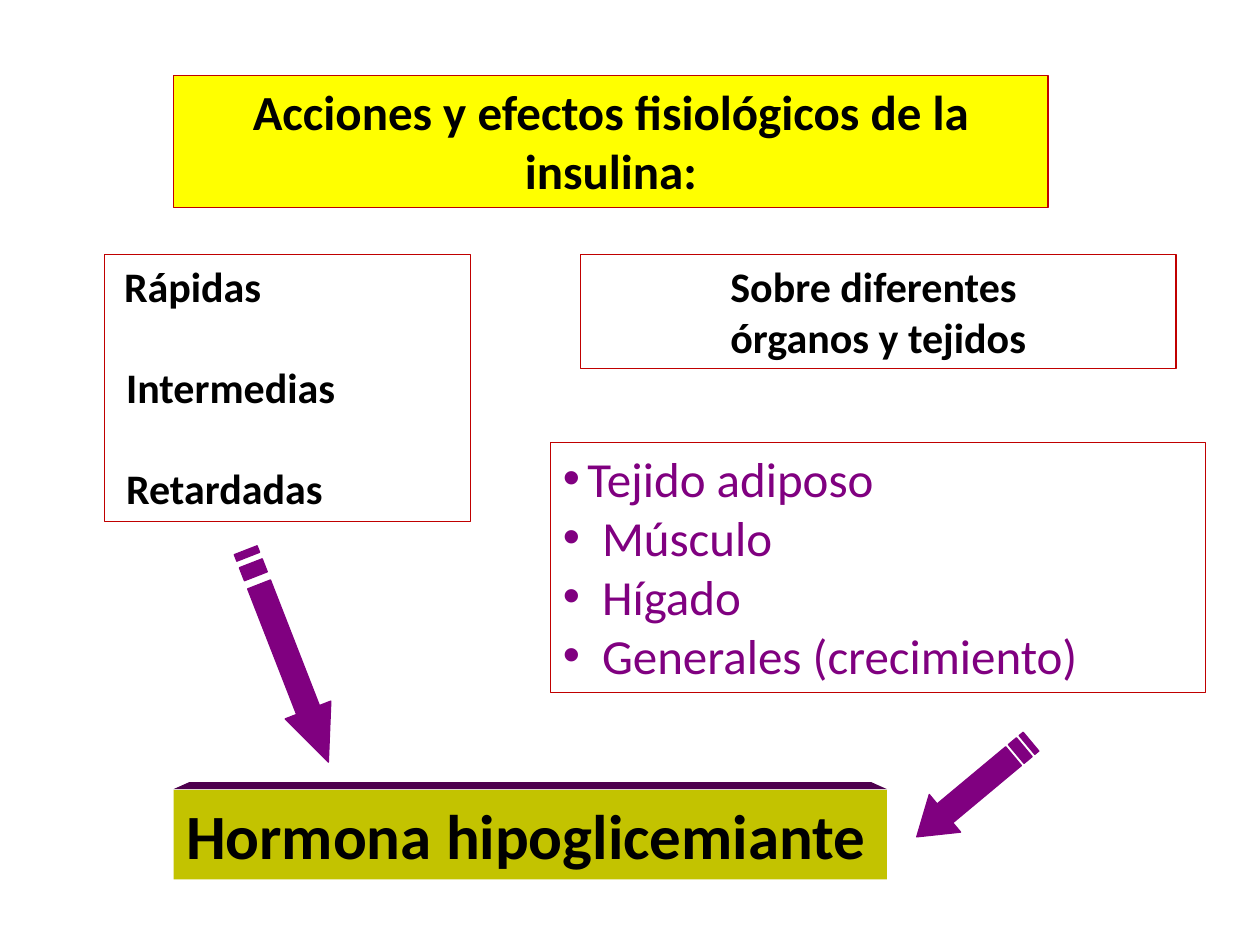
from lxml import etree
from pptx import Presentation
from pptx import util as u
from pptx.dml.color import RGBColor
from pptx.enum import shapes, text
from pptx.oxml.ns import qn

COLORS = {"yellow": "FFFF00", "olive": "C3C300", "white": "FFFFFF", "red": "C00000",
          "purple": "800080", "dark_purple": "4D004D", "black": "000000"}
LEFT, CENTER = text.PP_ALIGN.LEFT, text.PP_ALIGN.CENTER


def rgb(name):
    return RGBColor.from_string(COLORS[name])


class SlideBuilder:
    font = "Calibri"
    line_width = 0.75

    def __init__(self, slide):
        self.slide = slide

    def paint(self, shape, fill, line):
        if fill:
            shape.fill.solid()
            shape.fill.fore_color.rgb = rgb(fill)
        else:
            shape.fill.background()
        if line:
            shape.line.color.rgb = rgb(line)
            shape.line.width = u.Pt(self.line_width)
        else:
            shape.line.fill.background()

    def set_lines(self, shape, lines, size, color="black", bold=True, align=LEFT, wrap=True):
        frame = shape.text_frame
        frame.text = "\n".join(lines)
        frame.word_wrap = wrap
        frame.auto_size = text.MSO_AUTO_SIZE.NONE
        frame.vertical_anchor = text.MSO_ANCHOR.TOP
        for paragraph in frame.paragraphs:
            paragraph.alignment = align
            for run in paragraph.runs:
                run.font.name = self.font
                run.font.size = u.Pt(size)
                run.font.bold = bold
                run.font.color.rgb = rgb(color)
        return frame.paragraphs

    def title(self, box, line, size):
        title = self.slide.shapes.title
        title.left, title.top, title.width, title.height = map(u.Pt, box)
        self.paint(title, "yellow", "red")
        self.set_lines(title, [line], size, align=CENTER)

    def box(self, box, lines, size, fill="white", line="red", **style):
        shape = self.slide.shapes.add_shape(shapes.MSO_SHAPE.RECTANGLE, *map(u.Pt, box))
        shape.shadow.inherit = False
        self.paint(shape, fill, line)
        return self.set_lines(shape, lines, size, **style)

    def indent(self, paragraph, margin, bullet_size=None):
        """Indent a paragraph, hanging a bullet at the left edge if it has a size."""
        props = paragraph._p.get_or_add_pPr()
        props.set("marL", str(u.Pt(margin)))
        props.set("indent", str(-u.Pt(margin) if bullet_size else 0))
        if bullet_size:
            etree.SubElement(props, qn("a:buSzPts")).set("val", str(bullet_size * 100))
            etree.SubElement(props, qn("a:buFont")).set("typeface", "Arial")
            etree.SubElement(props, qn("a:buChar")).set("char", "•")

    def outline(self, contours, fill, line=None):
        first, *others = contours
        builder = self.slide.shapes.build_freeform(*first[0], scale=u.Pt(1))
        builder.add_line_segments(first[1:])
        for contour in others:
            builder.move_to(*contour[0])
            builder.add_line_segments(contour[1:])
        shape = builder.convert_to_shape()
        shape.shadow.inherit = False
        self.paint(shape, fill, line)
        return shape

    def striped_arrow(self, box, rotation):
        """Arrow with two stripes at its tail; its parts are 32nds of the length."""
        left, top, width, height = box

        def points(*pairs):
            return [(left + width * x / 32, top + height * y / 4) for x, y in pairs]

        def stripe(start, end):
            return points((start, 1), (end, 1), (end, 3), (start, 3))

        head = points((5, 1), (24, 1), (24, 0), (32, 2), (24, 4), (24, 3), (5, 3))
        arrow = self.outline([head, stripe(2, 4), stripe(0, 1)], "purple", "purple")
        arrow.rotation = rotation


def main():
    deck = Presentation()
    deck.slide_width, deck.slide_height = u.Pt(720), u.Pt(540)
    page = SlideBuilder(deck.slides.add_slide(deck.slide_layouts[5]))

    page.title((99.2, 43.2, 499.6, 75.2), "Acciones y efectos fisiológicos de la insulina:", 28)
    page.box((331.8, 145.4, 340.2, 65.4), ["Sobre diferentes ", "órganos y tejidos"], 24,
             align=CENTER)

    actions = page.box((59.8, 145.4, 209.2, 152.6), ["Rápidas", "Intermedias", "Retardadas"], 24)
    for action, margin in zip(actions, (4, 5.2, 5.2)):
        page.indent(action, margin)
    for action in actions[1:]:
        action.space_before = u.Pt(29)

    tissues = page.box((314.6, 252.8, 374.4, 143),
                       ["Tejido adiposo", "Músculo", "Hígado", "Generales (crecimiento)"], 28,
                       fill=None, color="purple", bold=False)
    for tissue, margin, size in zip(tissues, (14, 22.4, 22.4, 22.4), (18, 28, 28, 28)):
        page.indent(tissue, margin, size)

    left, top, width, height = hormone = (99.2, 451.4, 407.6, 51.2)
    page.box(hormone, ["Hormona hipoglicemiante"], 36, fill="olive", line=None, wrap=False)
    right, depth, inset = left + width, 4.4, 8.4
    page.outline([[(left, top), (left + inset, top - depth), (right - inset, top - depth),
                   (right, top)]], "dark_purple")

    page.striped_arrow((99.2, 360.8, 130.2, 28), 68.7)
    page.striped_arrow((514, 437, 85, 28), 140.2)
    deck.save("out.pptx")


if __name__ == "__main__":
    main()
